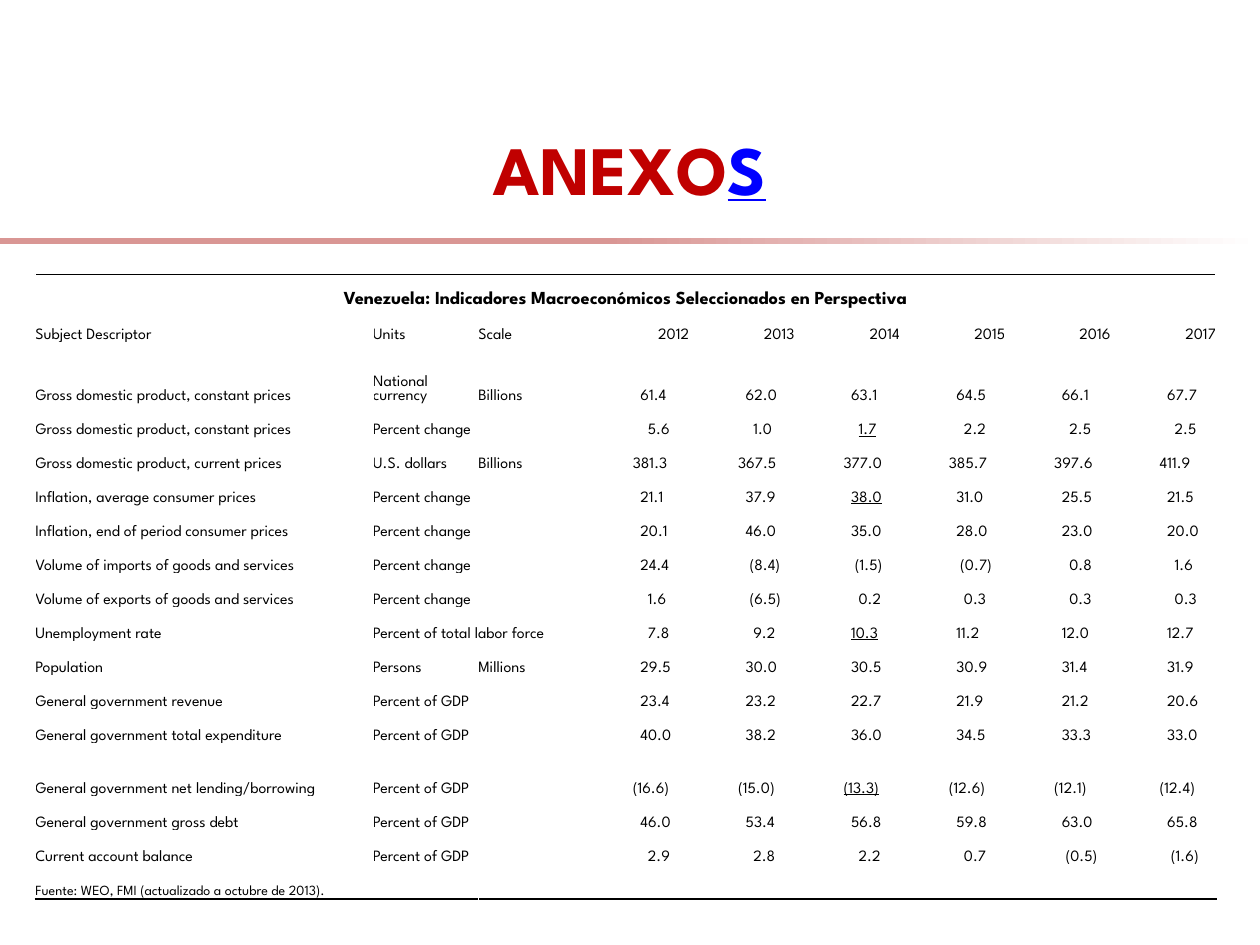
from dataclasses import dataclass

from lxml import etree
from pptx import Presentation
from pptx.dml.color import RGBColor as RGB
from pptx.enum.shapes import MSO_SHAPE as SHAPE
from pptx.enum.text import MSO_ANCHOR as ANCHOR, PP_ALIGN as ALIGN
from pptx.oxml.ns import qn
from pptx.util import Inches, Pt


@dataclass(frozen=True)
class Theme:
    font: str = "League Spartan"
    red: RGB = RGB(0xC0, 0x00, 0x00)
    blue: RGB = RGB(0x00, 0x00, 0xFF)
    rose: RGB = RGB(0xD9, 0x96, 0x94)
    black: RGB = RGB(0x00, 0x00, 0x00)
    white: RGB = RGB(0xFF, 0xFF, 0xFF)
    title: float = 39.6
    heading: float = 10.5
    body: float = 9
    note: float = 8
    rule: float = 1


THEME = Theme()
TABLE_TITLE = "Venezuela: Indicadores Macroeconómicos Seleccionados en Perspectiva"
HEADER = ["Subject Descriptor", "Units", "Scale",
          "2012", "2013", "2014", "2015", "2016", "2017"]
SOURCE = "Fuente: WEO, FMI (actualizado a octubre de 2013)."
PCT, GDP = "Percent change", "Percent of GDP"

# Descriptor, units, scale, values for 2012 to 2017
INDICATORS = [
    ("Gross domestic product, constant prices", "National currency", "Billions",
     "61.4 62.0 63.1 64.5 66.1 67.7"),
    ("Gross domestic product, constant prices", PCT, "", "5.6 1.0 1.7 2.2 2.5 2.5"),
    ("Gross domestic product, current prices", "U.S. dollars", "Billions",
     "381.3 367.5 377.0 385.7 397.6 411.9"),
    ("Inflation, average consumer prices", PCT, "", "21.1 37.9 38.0 31.0 25.5 21.5"),
    ("Inflation, end of period consumer prices", PCT, "",
     "20.1 46.0 35.0 28.0 23.0 20.0"),
    ("Volume of imports of goods and services", PCT, "",
     "24.4 (8.4) (1.5) (0.7) 0.8 1.6"),
    ("Volume of exports of goods and services", PCT, "",
     "1.6 (6.5) 0.2 0.3 0.3 0.3"),
    ("Unemployment rate", "Percent of total labor force", "",
     "7.8 9.2 10.3 11.2 12.0 12.7"),
    ("Population", "Persons", "Millions", "29.5 30.0 30.5 30.9 31.4 31.9"),
    ("General government revenue", GDP, "", "23.4 23.2 22.7 21.9 21.2 20.6"),
    ("General government total expenditure", GDP, "",
     "40.0 38.2 36.0 34.5 33.3 33.0"),
    ("General government net lending/borrowing", GDP, "",
     "(16.6) (15.0) (13.3) (12.6) (12.1) (12.4)"),
    ("General government gross debt", GDP, "", "46.0 53.4 56.8 59.8 63.0 65.8"),
    ("Current account balance", GDP, "", "2.9 2.8 2.2 0.7 (0.5) (1.6)"),
]
FIRST_YEAR, COL_2014 = 3, 5
UNDERLINED_ROWS = {3, 5, 9, 13}
ROW_HEIGHT, TALL_ROWS = 0.27, {2: 0.49, 13: 0.42}
TABLE_WIDTH, DESCRIPTOR_WIDTH = 9.37, 2.68


def add_run(p, text, color=THEME.black, **formats):
    r = p.add_run()
    r.text = text
    r.font.color.rgb = color
    for name, value in {"name": THEME.font, **formats}.items():
        setattr(r.font, name, value)


def add_title(slide):
    tf = slide.shapes.add_textbox(
        Inches(0.5), Inches(0.53), Inches(9), Inches(1.25)).text_frame
    for name, value in {"word_wrap": True, "vertical_anchor": ANCHOR.BOTTOM,
                        "margin_bottom": Inches(0.12)}.items():
        setattr(tf, name, value)
    p = tf.paragraphs[0]
    p.alignment = ALIGN.CENTER
    formats = {"size": Pt(THEME.title), "bold": True}
    add_run(p, "ANEXO", THEME.red, **formats)
    add_run(p, "S", THEME.blue, underline=True, **formats)


def add_fading_bar(slide):
    sp = slide.shapes.add_shape(
        SHAPE.RECTANGLE, 0, Inches(1.89), Inches(10), Inches(0.05))
    sp.shadow.inherit = False
    sp.line.fill.background()
    sp.fill.gradient()
    sp.fill.gradient_angle = 0
    stops = [(0.48, THEME.rose), (1, THEME.white)]
    for stop, (position, color) in zip(sp.fill.gradient_stops, stops):
        stop.position = position
        stop.color.rgb = color


def add_border(cell, side):
    ln = etree.SubElement(cell._tc.get_or_add_tcPr(), qn(f"a:ln{side}"),
                          w=str(Pt(THEME.rule)))
    fill = etree.SubElement(ln, qn("a:solidFill"))
    etree.SubElement(fill, qn("a:srgbClr"), val=str(THEME.black))


def add_tab_stop(p, position):
    tabs = etree.SubElement(p._p.get_or_add_pPr(), qn("a:tabLst"))
    etree.SubElement(tabs, qn("a:tab"), pos=str(Inches(position)), algn="l")


def clear_cell(cell):
    for name, value in {"margin_left": 0, "margin_right": 0, "margin_top": 0,
                        "margin_bottom": 0,
                        "vertical_anchor": ANCHOR.BOTTOM}.items():
        setattr(cell, name, value)
    cell.fill.background()


def write_cell(cell, text, align=None, size=THEME.body, bold=False):
    p = cell.text_frame.paragraphs[0]
    p.alignment = align
    add_run(p, text, size=Pt(size), bold=bold)


def write_value(cell, value, underlined):
    """Indent a value by its digits; an underline starts at the cell's edge."""
    digits = len(value.strip("()")) - 2
    step = 0.03 * digits if value.startswith("(") else 0
    indent = 0.51 - 0.06 * (digits - 1) - step
    if underlined:
        p = cell.text_frame.paragraphs[0]
        add_tab_stop(p, indent)
        add_run(p, "\t" + value, size=Pt(THEME.body), underline=True)
    else:
        cell.margin_left = Inches(indent)
        write_cell(cell, value)


def add_indicator_table(slide):
    n_rows, n_cols = len(INDICATORS) + 3, len(HEADER)
    heights = [TALL_ROWS.get(i, ROW_HEIGHT) for i in range(n_rows)]
    table = slide.shapes.add_table(
        n_rows, n_cols, Inches(0.28), Inches(2.18),
        Inches(TABLE_WIDTH), Inches(sum(heights))).table
    table.first_row = table.horz_banding = False
    for row, height in zip(table.rows, heights):
        row.height = Inches(height)
    for i, col in enumerate(table.columns):
        col.width = Inches((TABLE_WIDTH - DESCRIPTOR_WIDTH) / (n_cols - 1)
                           if i else DESCRIPTOR_WIDTH)

    # Rules above and below, plain cells between
    last = n_rows - 1
    for col in range(n_cols):
        add_border(table.cell(0, col), "T")
        add_border(table.cell(last, col), "B")
    for cell in table.iter_cells():
        clear_cell(cell)

    # Heading and column names
    table.cell(0, 0).merge(table.cell(0, n_cols - 1))
    write_cell(table.cell(0, 0), TABLE_TITLE, ALIGN.CENTER, THEME.heading, True)
    for col, name in enumerate(HEADER):
        write_cell(table.cell(1, col), name,
                   ALIGN.RIGHT if col >= FIRST_YEAR else None)

    # Indicators
    for row, (descriptor, units, scale, values) in enumerate(INDICATORS, 2):
        write_cell(table.cell(row, 0), descriptor)
        write_cell(table.cell(row, 1), units)
        if scale:
            write_cell(table.cell(row, 2), scale)
        else:
            table.cell(row, 1).merge(table.cell(row, 2))
        for col, value in enumerate(values.split(), FIRST_YEAR):
            write_value(table.cell(row, col), value,
                        col == COL_2014 and row in UNDERLINED_ROWS)

    # Source; small type keeps the empty cells low
    table.cell(last, 0).merge(table.cell(last, 1))
    write_cell(table.cell(last, 0), SOURCE, size=THEME.note)
    for cell in table.iter_cells():
        if not cell.text_frame.text:
            etree.SubElement(cell.text_frame.paragraphs[0]._p,
                             qn("a:endParaRPr"), sz=str(THEME.note * 100))


def main():
    prs = Presentation()
    prs.slide_width, prs.slide_height = Inches(10), Inches(7.5)
    slide = prs.slides.add_slide(prs.slide_layouts[6])
    add_title(slide)
    add_fading_bar(slide)
    add_indicator_table(slide)
    prs.save("out.pptx")


if __name__ == "__main__":
    main()
